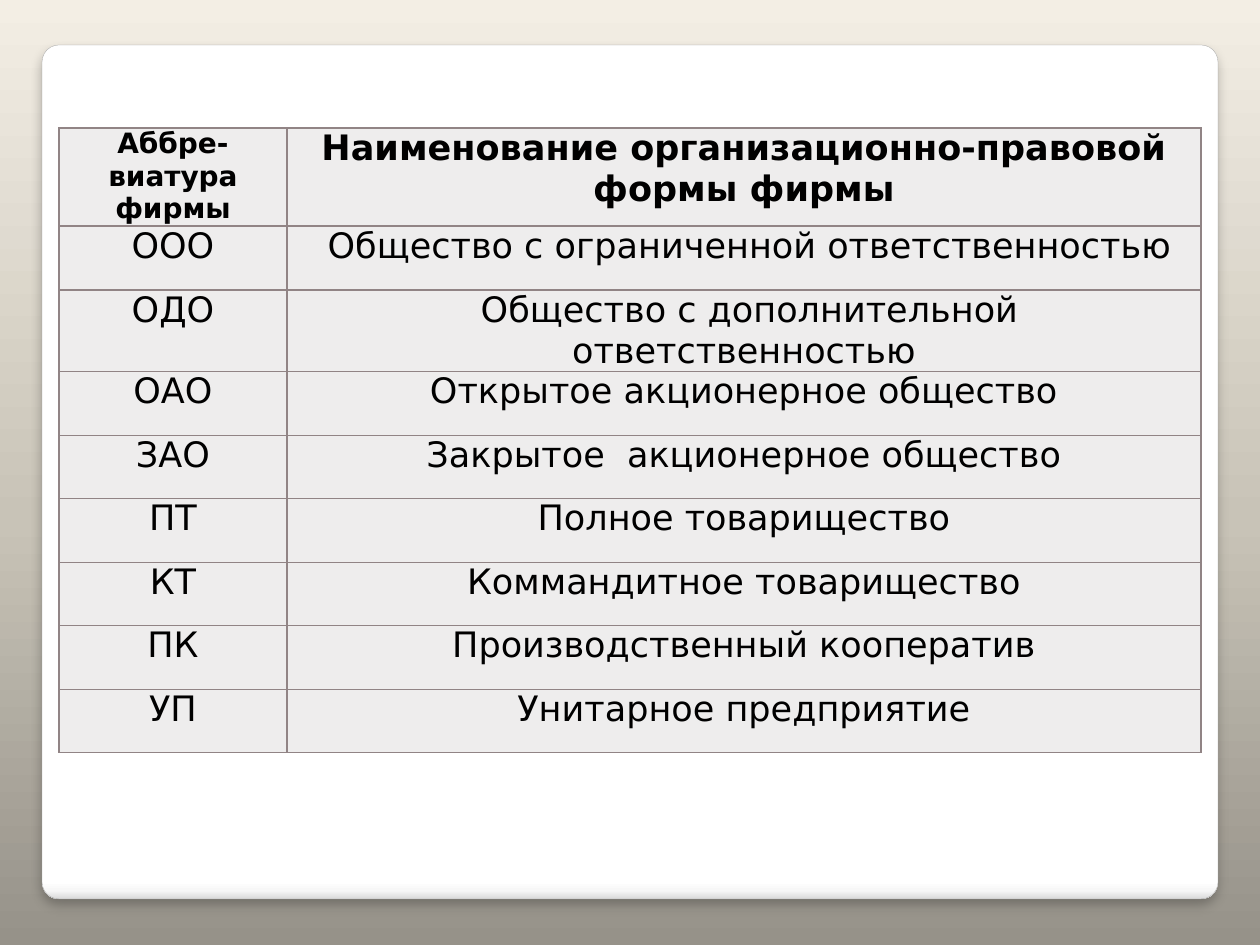
from dataclasses import dataclass
from lxml.etree import SubElement
from pptx import Presentation
from pptx.dml.color import RGBColor
from pptx.enum.shapes import MSO_SHAPE
from pptx.enum.text import PP_ALIGN
from pptx.oxml.ns import qn
from pptx.util import Emu, Pt


@dataclass(frozen=True)
class Theme:
    font: str = "DejaVu Sans"
    ink: str = "000000"
    cell: str = "EEEDED"
    rule: str = "918485"
    edge: str = "A4A4A4"
    back: tuple = ((0, "969289"), (45, "C8C3B7"), (100, "F3EEE4"))
    panel: tuple = ((0, "FFFFFF"), (98, "FFFFFF"), (99, "F7F7F7"), (100, "DADADA"))
    small: int = 16
    large: int = 20


THEME = Theme()
ROWS = [
    ("Аббре-виатура\nфирмы", "Наименование организационно-правовой формы фирмы"),
    ("ООО", " Общество с ограниченной ответственностью"),
    ("ОДО", " Общество с дополнительной ответственностью"),
    ("ОАО", "Открытое акционерное общество"),
    ("ЗАО", "Закрытое  акционерное общество"),
    ("ПТ", "Полное товарищество"),
    ("КТ", "Коммандитное товарищество"),
    ("ПК", "Производственный кооператив"),
    ("УП", "Унитарное предприятие"),
]
SLIDE = (1260, 945)
PANEL = (42, 45, 1176, 854)
TABLE = (59, 128)
COLS = (228, 914)
HEAD, ROW = 98, 63
INSET = 9


def px(n):
    return Emu(round(n * 914400 / 126))


def node(root, tag, **attrs):
    return SubElement(root, qn(tag), {k: str(v) for k, v in attrs.items()})


def blend(fill, root, stops, angle):
    fill.gradient()
    fill.gradient_angle = angle
    ramp = root.find(".//" + qn("a:gsLst"))
    ramp[:] = []
    for pos, tint in stops:
        node(node(ramp, "a:gs", pos=pos * 1000), "a:srgbClr", val=tint)


def shade(shape):
    shape.shadow.inherit = False
    glow = shape._element.spPr.find(qn("a:effectLst"))
    cast = node(glow, "a:outerShdw", blurRad=Pt(6), dist=Pt(4),
                dir=5400000, algn="t", rotWithShape=0)
    node(node(cast, "a:srgbClr", val=THEME.ink), "a:alpha", val=25000)


def frame(cell):
    props = cell._tc.get_or_add_tcPr()
    for side in "LRTB":
        line = node(props, f"a:ln{side}", w=Pt(1))
        node(node(line, "a:solidFill"), "a:srgbClr", val=THEME.rule)


def write(cell, text, size, bold):
    frame(cell)
    cell.fill.solid()
    cell.fill.fore_color.rgb = RGBColor.from_string(THEME.cell)
    cell.margin_left = cell.margin_right = px(INSET)
    cell.margin_top = cell.margin_bottom = 0
    cell.text_frame.text = text
    for para in cell.text_frame.paragraphs:
        para.alignment = PP_ALIGN.CENTER
        for run in para.runs:
            font = run.font
            font.name, font.size, font.bold = THEME.font, Pt(size), bold
            font.color.rgb = RGBColor.from_string(THEME.ink)


def main():
    deck = Presentation()
    deck.slide_width, deck.slide_height = map(px, SLIDE)
    slide = deck.slides.add_slide(deck.slide_layouts[6])
    blend(slide.background.fill, slide._element, THEME.back, 90)

    panel = slide.shapes.add_shape(MSO_SHAPE.ROUNDED_RECTANGLE, *map(px, PANEL))
    panel.adjustments[0] = 0.02
    blend(panel.fill, panel._element, THEME.panel, 270)
    panel.line.color.rgb = RGBColor.from_string(THEME.edge)
    panel.line.width = Pt(0.16)
    shade(panel)

    highs = [HEAD] + [ROW + i % 2 for i in range(1, len(ROWS))]
    box = (*TABLE, sum(COLS), sum(highs))
    table = slide.shapes.add_table(len(ROWS), len(COLS), *map(px, box)).table
    table.horz_banding = False
    for col, wide in zip(table.columns, COLS):
        col.width = px(wide)
    for i, (row, high, texts) in enumerate(zip(table.rows, highs, ROWS)):
        row.height = px(high)
        for j, (cell, text) in enumerate(zip(row.cells, texts)):
            size = THEME.small if i == j == 0 else THEME.large
            write(cell, text, size, i == 0)
    deck.save("out.pptx")


if __name__ == "__main__":
    main()
